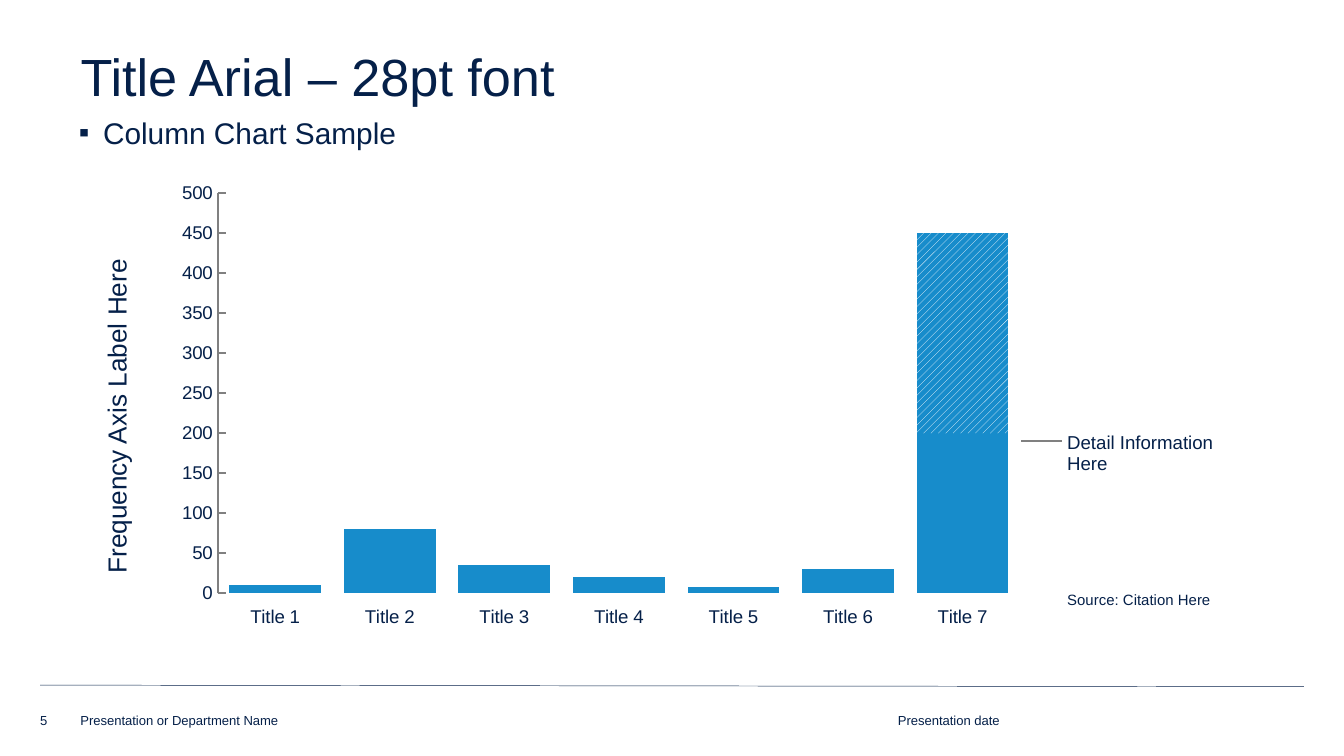
from dataclasses import dataclass

from lxml.etree import SubElement
from pptx import Presentation
from pptx.chart.data import CategoryChartData
from pptx.dml.color import RGBColor
from pptx.enum.chart import XL_CHART_TYPE, XL_TICK_MARK
from pptx.enum.dml import MSO_PATTERN
from pptx.enum.shapes import MSO_CONNECTOR
from pptx.enum.text import MSO_ANCHOR, MSO_AUTO_SIZE, PP_ALIGN
from pptx.oxml.ns import qn
from pptx.util import Cm, Pt


@dataclass(frozen=True)
class Theme:
    font: str = "Arial"
    chart_font: str = "Times New Roman"
    navy: RGBColor = RGBColor(0x05, 0x20, 0x49)
    blue: RGBColor = RGBColor(0x17, 0x8C, 0xCB)
    gray: RGBColor = RGBColor(0x80, 0x80, 0x80)
    white: RGBColor = RGBColor(0xFF, 0xFF, 0xFF)
    title: Pt = Pt(28)
    subtitle: Pt = Pt(16)
    axis_label: Pt = Pt(14)
    detail: Pt = Pt(10)
    source: Pt = Pt(8)
    footer: Pt = Pt(7)
    chart: Pt = Pt(18)


THEME = Theme()
FREQUENCIES = {
    "Title 1": (10, None),
    "Title 2": (80, None),
    "Title 3": (35, None),
    "Title 4": (20, None),
    "Title 5": (8, None),
    "Title 6": (30, None),
    "Title 7": (200, 250),
}


def style_font(font, size, face=THEME.font):
    font.name = face
    font.size = size
    font.color.rgb = THEME.navy


def add_run(paragraph, text, size):
    run = paragraph.add_run()
    run.text = text
    style_font(run.font, size)


def add_label(slide, lines, box, size, anchor=MSO_ANCHOR.TOP, spacing=0.9, inset=(0, 0)):
    """Add a text box whose lines form one paragraph, and return the box."""
    label = slide.shapes.add_textbox(*map(Cm, box))
    frame = label.text_frame
    frame.word_wrap = True
    frame.vertical_anchor = anchor
    frame.margin_left = frame.margin_right = Cm(inset[0])
    frame.margin_top = frame.margin_bottom = Cm(inset[1])
    paragraph = frame.paragraphs[0]
    paragraph.line_spacing = spacing
    for index, line in enumerate(lines):
        if index:
            paragraph.add_line_break()
        add_run(paragraph, line, size)
    return label


def add_line(slide, start, end, color, width):
    line = slide.shapes.add_connector(MSO_CONNECTOR.STRAIGHT, *map(Cm, start + end))
    line.line.color.rgb = color
    line.line.width = Pt(width)
    SubElement(line._element.spPr, qn("a:effectLst"))


def add_title(slide, text):
    title = slide.shapes.title
    title.left, title.top, title.width, title.height = map(Cm, (1.27, 0.89, 22.45, 1.27))
    frame = title.text_frame
    frame.auto_size = MSO_AUTO_SIZE.NONE
    frame.vertical_anchor = MSO_ANCHOR.BOTTOM
    paragraph = frame.paragraphs[0]
    paragraph.alignment = PP_ALIGN.LEFT
    paragraph.line_spacing = 0.85
    add_run(paragraph, text, THEME.title)


def add_bullet(paragraph, indent):
    properties = paragraph._p.get_or_add_pPr()
    properties.set("marL", str(Cm(indent)))
    properties.set("indent", str(-Cm(indent)))
    color = SubElement(properties, qn("a:buClr"))
    SubElement(color, qn("a:srgbClr"), val=str(THEME.navy))
    SubElement(properties, qn("a:buFont"), typeface=THEME.font)
    SubElement(properties, qn("a:buChar"), char="▪")


def place_plot(chart, x, y, w, h):
    """Fix the inner plot area, in fractions of the chart."""
    plot_area = chart._chartSpace.chart.plotArea
    layout = plot_area.find(qn("c:layout"))
    if layout is None:
        layout = SubElement(plot_area, qn("c:layout"))
        plot_area.insert(0, layout)
    manual = SubElement(layout, qn("c:manualLayout"))
    settings = {"layoutTarget": "inner", "xMode": "edge", "yMode": "edge",
                "x": x, "y": y, "w": w, "h": h}
    for tag, value in settings.items():
        SubElement(manual, qn(f"c:{tag}"), val=str(value))


def style_axes(chart):
    categories, values = chart.category_axis, chart.value_axis
    for axis in (categories, values):
        axis.has_major_gridlines = False
        axis.minor_tick_mark = XL_TICK_MARK.NONE
        style_font(axis.tick_labels.font, THEME.detail)
    categories.major_tick_mark = XL_TICK_MARK.OUTSIDE
    categories.format.line.fill.background()
    values.major_tick_mark = XL_TICK_MARK.INSIDE
    values.minimum_scale, values.maximum_scale, values.major_unit = 0, 500, 50
    values.format.line.color.rgb = THEME.gray
    values.format.line.width = Pt(1)


def add_frequency_chart(slide):
    data = CategoryChartData()
    data.categories = FREQUENCIES
    for number, values in enumerate(zip(*FREQUENCIES.values()), 1):
        data.add_series(f"Series {number}", values)
    chart = slide.shapes.add_chart(
        XL_CHART_TYPE.COLUMN_STACKED, *map(Cm, (2.84, 3.4, 18.26, 8.46)), data
    ).chart
    chart.has_title = False
    chart.has_legend = False
    style_font(chart.font, THEME.chart, THEME.chart_font)
    style_axes(chart)
    place_plot(chart, 0.07, 0.03, 0.83, 0.9)

    columns = chart.plots[0]
    columns.vary_by_categories = False
    columns.gap_width = 25
    columns.overlap = 100
    for series in columns.series:
        series.format.fill.solid()
        series.format.fill.fore_color.rgb = THEME.blue
    hatch = columns.series[1].points[len(FREQUENCIES) - 1].format.fill
    hatch.patterned()
    hatch.pattern = MSO_PATTERN.WIDE_UPWARD_DIAGONAL
    hatch.fore_color.rgb = THEME.white
    hatch.back_color.rgb = THEME.blue


def add_footer(slide):
    add_line(slide, (0.76, 12.95), (24.64, 12.98), THEME.navy, 0.25)
    for text, box in (
        ("5", (0.76, 13.44, 0.69, 0.33)),
        ("Presentation or Department Name", (1.52, 13.49, 11.96, 0.28)),
        ("Presentation date", (16.97, 13.44, 2.57, 0.33)),
    ):
        add_label(slide, [text], box, THEME.footer, MSO_ANCHOR.BOTTOM, spacing=1.0)


def main():
    deck = Presentation()
    deck.slide_width, deck.slide_height = Cm(25.4), Cm(14.29)
    slide = deck.slides.add_slide(deck.slide_layouts[5])

    add_title(slide, "Title Arial – 28pt font")
    subtitle = add_label(slide, ["Column Chart Sample"], (1.24, 2.11, 22.43, 0.79),
                         THEME.subtitle, inset=(0.25, 0.13))
    add_bullet(subtitle.text_frame.paragraphs[0], 0.46)
    add_footer(slide)

    add_frequency_chart(slide)
    axis_label = add_label(slide, ["Frequency Axis Label Here"],
                           (-1.22, 7.59, 6.93, 0.56), THEME.axis_label)
    axis_label.rotation = 270
    axis_label.text_frame.paragraphs[0].alignment = PP_ALIGN.CENTER

    add_line(slide, (19.3, 8.33), (20.07, 8.33), THEME.gray, 1)
    add_label(slide, ["Detail Information", "Here"], (20.17, 8.2, 4.22, 0.76), THEME.detail)
    add_label(slide, ["Source: Citation Here"], (20.17, 11.2, 4.22, 0.3), THEME.source)

    deck.save("out.pptx")


if __name__ == "__main__":
    main()
